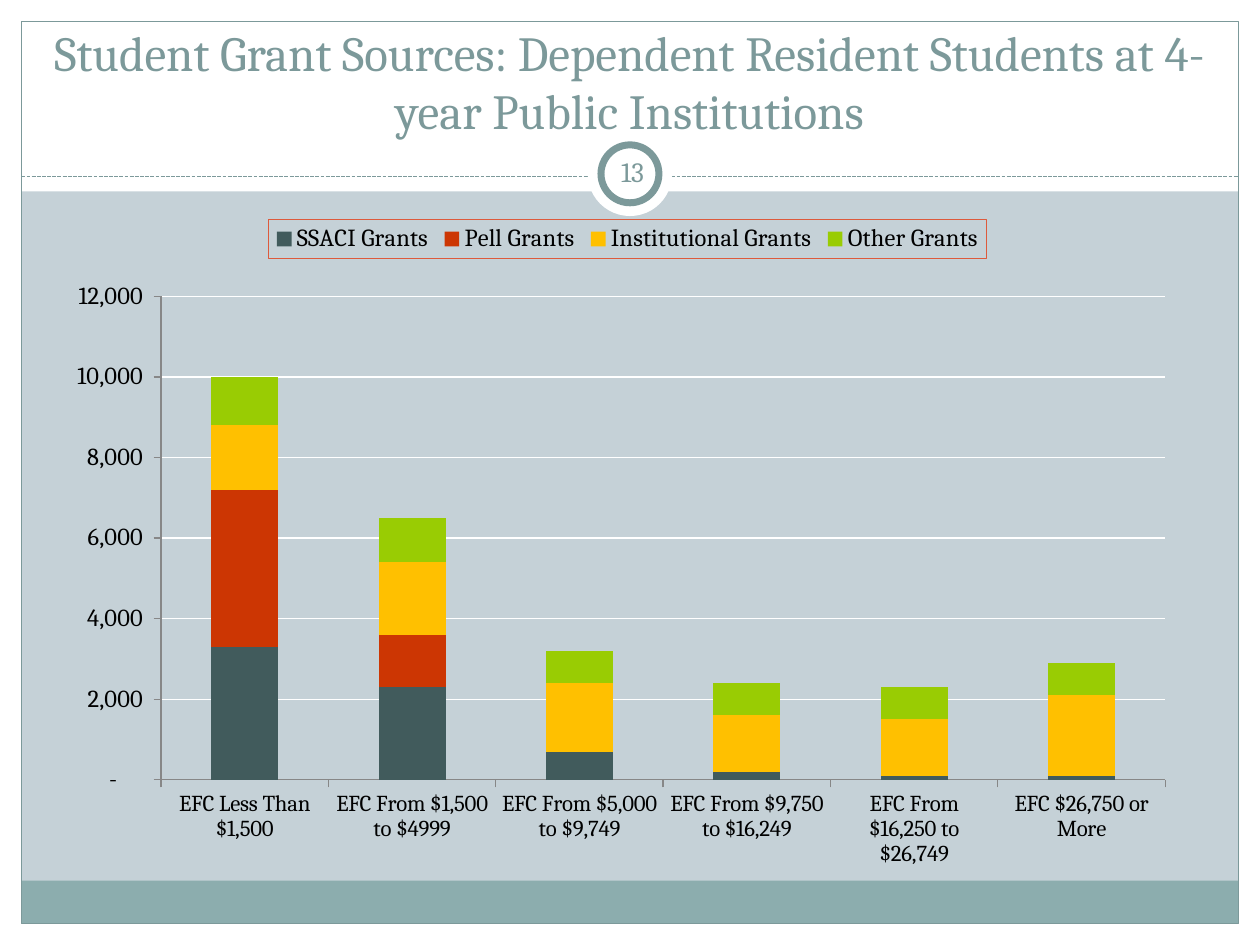
from lxml import etree
from pptx import Presentation
from pptx.chart.data import CategoryChartData
from pptx.dml.color import RGBColor
from pptx.enum.chart import XL_CHART_TYPE, XL_LEGEND_POSITION, XL_TICK_MARK
from pptx.enum.dml import MSO_LINE
from pptx.enum.shapes import MSO_CONNECTOR, MSO_SHAPE
from pptx.enum.text import MSO_ANCHOR, MSO_AUTO_SIZE, PP_ALIGN
from pptx.oxml import parse_xml
from pptx.oxml.ns import nsdecls, qn
from pptx.util import Inches, Pt

RECT, OVAL = MSO_SHAPE.RECTANGLE, MSO_SHAPE.OVAL
STRAIGHT, DASH = MSO_CONNECTOR.STRAIGHT, MSO_LINE.SQUARE_DOT
STACKED = XL_CHART_TYPE.COLUMN_STACKED
TOP = XL_LEGEND_POSITION.TOP
OUTSIDE = XL_TICK_MARK.OUTSIDE
CENTER, NO_FIT = PP_ALIGN.CENTER, MSO_AUTO_SIZE.NONE
BOTTOM, MIDDLE = MSO_ANCHOR.BOTTOM, MSO_ANCHOR.MIDDLE

TITLE = "Student Grant Sources: Dependent Resident Students at 4-year Public Institutions"
NUMBER = "13"
CATEGORIES = [
    "EFC Less Than $1,500", "EFC From $1,500 to $4999", "EFC From $5,000 to $9,749",
    "EFC From $9,750 to $16,249", "EFC From $16,250 to $26,749", "EFC $26,750 or More",
]
GRANTS = [
    ("SSACI Grants", "415B5C", (3300, 2300, 700, 200, 100, 100)),
    ("Pell Grants", "CC3603", (3900, 1300, 0, 0, 0, 0)),
    ("Institutional Grants", "FFC000", (1600, 1800, 1700, 1400, 1400, 2000)),
    ("Other Grants", "99CC03", (1200, 1100, 800, 800, 800, 800)),
]
THEME = {
    "font": "Cambria", "title": 28, "number": 16, "chart": 14, "category": 13,
    "back": "C5D1D7", "white": "FFFFFF", "accent": "7C999A", "band": "8CADAE",
    "ink": "000000", "axis": "878787", "legend": "DD5A3C",
}
NUMBER_FORMAT = '_(* #,##0_);_(* \\(#,##0\\);_(* "-"??_);_(@_)'
PLOT = {"x": 0.102, "y": 0.128, "w": 0.857, "h": 0.72}

WIDTH, HEIGHT, MARGIN = 10, 7.5, 0.17
HEADER, RULE = 1.52, 1.4
INNER = WIDTH - 2 * MARGIN
BADGE_Y = 1.38


def circle(diameter):
    return (WIDTH - diameter) / 2, BADGE_Y - diameter / 2, diameter, diameter


FRAME_PARTS = [
    (RECT, (0, HEIGHT - MARGIN, WIDTH, MARGIN), "white", None),
    (RECT, (0, 0, WIDTH, HEADER), "white", None),
    (RECT, (0, 0, MARGIN, HEIGHT), "white", None),
    (RECT, (WIDTH - MARGIN, 0, MARGIN, HEIGHT), "white", None),
    (RECT, (MARGIN, 6.99, INNER, 0.34), "band", None),
    (RECT, (MARGIN, MARGIN, INNER, HEIGHT - 2 * MARGIN), None, 0.75),
]
BADGE_PARTS = [
    (OVAL, circle(0.67), "white", None),
    (OVAL, circle(0.46), "white", 4),
]


def color(name):
    return RGBColor.from_string(THEME.get(name, name))


def paint(fill, name):
    fill.solid()
    fill.fore_color.rgb = color(name)


def stroke(line, name, width):
    line.color.rgb = color(name)
    line.width = Pt(width)


def style_font(font, size, name):
    for key, value in {"name": THEME["font"], "size": Pt(THEME[size])}.items():
        setattr(font, key, value)
    font.color.rgb = color(name)


def add_parts(page, parts):
    for kind, place, fill, width in parts:
        shape = page.shapes.add_shape(kind, *map(Inches, place))
        shape.shadow.inherit = False
        if fill:
            paint(shape.fill, fill)
        else:
            shape.fill.background()
        if width:
            stroke(shape.line, "accent", width)
        else:
            shape.line.fill.background()


def add_rule(page):
    rule = page.shapes.add_connector(
        STRAIGHT, *map(Inches, (MARGIN, RULE, WIDTH - MARGIN, RULE)))
    stroke(rule.line, "accent", 0.75)
    rule.line.dash_style = DASH
    etree.SubElement(rule._element.spPr, qn("a:effectLst"))


def write(box, text, size, anchor):
    frame = box.text_frame
    inset = Inches(0.05)
    settings = {
        "word_wrap": True, "auto_size": NO_FIT, "vertical_anchor": anchor,
        "margin_left": inset, "margin_right": inset,
        "margin_top": inset, "margin_bottom": inset,
    }
    for key, value in settings.items():
        setattr(frame, key, value)
    para = frame.paragraphs[0]
    para.alignment = CENTER
    span = para.add_run()
    span.text = text
    style_font(span.font, size, "accent")


def add_title(page):
    title = page.shapes.title
    place = dict(zip(("left", "top", "width", "height"), (0.33, 0.33, 9.33, 0.83)))
    for key, value in place.items():
        setattr(title, key, Inches(value))
    write(title, TITLE, "title", BOTTOM)
    page.shapes._spTree.append(title._element)


def place_plot(chart):
    area = chart._chartSpace.chart.plotArea
    for layout in area.findall(qn("c:layout")):
        area.remove(layout)
    modes = "".join(f'<c:{key}Mode val="edge"/>' for key in "xy")
    sizes = "".join(f'<c:{key} val="{value}"/>' for key, value in PLOT.items())
    area.insert(0, parse_xml(
        f'<c:layout {nsdecls("c")}><c:manualLayout><c:layoutTarget val="inner"/>'
        f"{modes}{sizes}</c:manualLayout></c:layout>"))


def frame_legend(legend):
    border = parse_xml(
        f'<c:spPr {nsdecls("c", "a")}><a:noFill/><a:ln w="6350"><a:solidFill>'
        f'<a:srgbClr val="{THEME["legend"]}"/></a:solidFill></a:ln></c:spPr>')
    legend._element.find(qn("c:txPr")).addprevious(border)


def add_grant_chart(page):
    data = CategoryChartData()
    data.categories = CATEGORIES
    for name, _, values in GRANTS:
        data.add_series(name, values)
    chart = page.shapes.add_chart(
        STACKED, *map(Inches, (0.33, 1.67, 9.3, 5.33)), data).chart
    style_font(chart.font, "chart", "ink")
    chart.has_title = False
    chart.has_legend = True
    legend = chart.legend
    legend.position = TOP
    legend.include_in_layout = True
    style_font(legend.font, "chart", "ink")
    frame_legend(legend)

    plot = chart.plots[0]
    for key, value in {"gap_width": 150, "overlap": 100, "vary_by_categories": False}.items():
        setattr(plot, key, value)
    for series, (_, shade, _) in zip(plot.series, GRANTS):
        paint(series.format.fill, shade)

    for axis, size in ((chart.category_axis, "category"), (chart.value_axis, "chart")):
        axis.major_tick_mark = OUTSIDE
        stroke(axis.format.line, "axis", 0.75)
        style_font(axis.tick_labels.font, size, "ink")
    scale = chart.value_axis
    for key, value in {"minimum_scale": 0, "maximum_scale": 12000, "major_unit": 2000}.items():
        setattr(scale, key, value)
    scale.tick_labels.number_format = NUMBER_FORMAT
    scale.tick_labels.number_format_is_linked = False
    stroke(scale.major_gridlines.format.line, "white", 0.75)
    place_plot(chart)


def main():
    deck = Presentation()
    deck.slide_width, deck.slide_height = Inches(WIDTH), Inches(HEIGHT)
    page = deck.slides.add_slide(deck.slide_layouts[5])
    paint(page.background.fill, "back")
    add_parts(page, FRAME_PARTS)
    add_rule(page)
    add_parts(page, BADGE_PARTS)
    add_title(page)
    number = page.shapes.add_textbox(*map(Inches, (4.77, 1.12, 0.5, 0.48)))
    write(number, NUMBER, "number", MIDDLE)
    add_grant_chart(page)
    deck.save("out.pptx")


if __name__ == "__main__":
    main()
